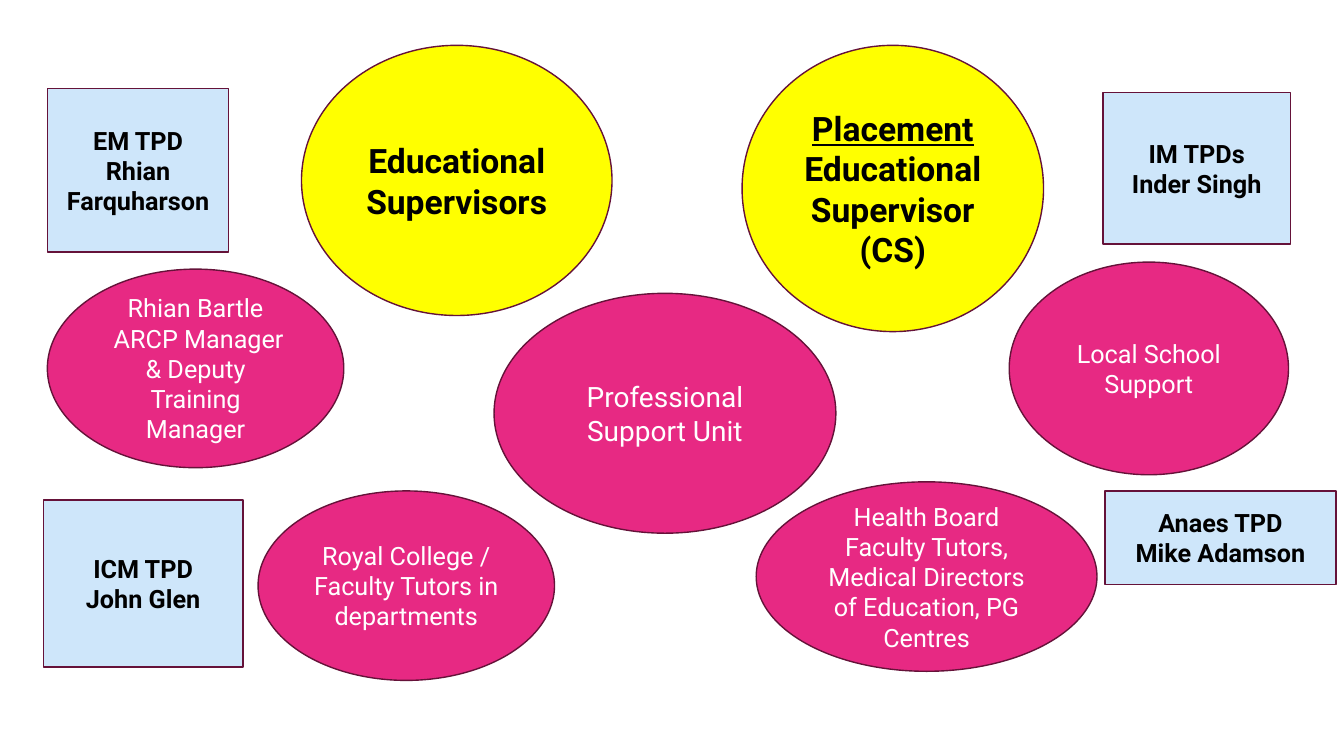
from pptx import Presentation
from pptx.dml.color import RGBColor
from pptx.enum.shapes import MSO_SHAPE
from pptx.enum.text import MSO_ANCHOR, PP_ALIGN
from pptx.util import Inches, Pt

FONT = "Roboto"
PINK, YELLOW, BLUE = "E72983", "FFFF00", "CEE6FA"
OUTLINE, WHITE, BLACK = "651239", "FFFFFF", "000000"

# Each entry: box (left, top, width, height), text, size
SUPPORT = [
    ((0.47, 2.67, 2.94, 1.97),
     "Rhian Bartle\n ARCP Manager & Deputy Training Manager", 18),
    ((4.9, 2.91, 3.39, 2.38), "Professional Support Unit", 20),
    ((10.01, 2.6, 2.77, 2.11), "Local School Support", 18),
    ((2.56, 4.87, 2.94, 1.88),
     "Royal College / Faculty Tutors in departments", 18),
    ((7.5, 4.78, 3.38, 1.88),
     "Health Board Faculty Tutors, Medical Directors of Education, PG Centres", 18),
]
# Each entry: box, underlined lead word, remaining text
SUPERVISORS = [
    ((2.99, 0.45, 3.08, 2.68), "", "Educational Supervisors"),
    ((7.36, 0.45, 2.99, 2.84), "Placement", " Educational Supervisor (CS)"),
]
# Each entry: box, text
DIRECTORS = [
    ((0.47, 0.88, 1.8, 1.62), "EM TPD\nRhian Farquharson"),
    ((0.43, 4.96, 1.98, 1.66), "ICM TPD\nJohn Glen"),
    ((10.94, 0.92, 1.86, 1.5), "IM TPDs\nInder Singh"),
    ((10.96, 4.87, 2.29, 0.93), "Anaes TPD\nMike Adamson"),
]


def rgb(value):
    return RGBColor.from_string(value)


def format_run(r, size, color, bold):
    r.font.name = FONT
    r.font.size = Pt(size)
    r.font.bold = bold
    r.font.color.rgb = rgb(color)


def add_node(s, kind, box, fill, text, size, color, bold=False):
    """Add an outlined shape with centred text."""
    sp = s.shapes.add_shape(kind, *[Inches(v) for v in box])
    sp.shadow.inherit = False
    sp.fill.solid()
    sp.fill.fore_color.rgb = rgb(fill)
    sp.line.color.rgb = rgb(OUTLINE)
    sp.line.width = Pt(1)
    tf = sp.text_frame
    tf.word_wrap = True
    tf.vertical_anchor = MSO_ANCHOR.MIDDLE
    tf.text = text
    for p in tf.paragraphs:
        p.alignment = PP_ALIGN.CENTER
        for r in p.runs:
            format_run(r, size, color, bold)
    return sp


def add_support(s, box, text, size):
    add_node(s, MSO_SHAPE.OVAL, box, PINK, text, size, WHITE)


def add_supervisor(s, box, lead, text):
    sp = add_node(s, MSO_SHAPE.OVAL, box, YELLOW, lead or text, 24, BLACK, True)
    if lead:
        p = sp.text_frame.paragraphs[0]
        p.runs[0].font.underline = True
        r = p.add_run()
        r.text = text
        format_run(r, 24, BLACK, True)


def add_director(s, box, text):
    add_node(s, MSO_SHAPE.RECTANGLE, box, BLUE, text, 18, BLACK, True)


def main():
    prs = Presentation()
    prs.slide_width, prs.slide_height = Inches(13.33), Inches(7.5)
    s = prs.slides.add_slide(prs.slide_layouts[6])

    # Support network
    for item in SUPPORT:
        add_support(s, *item)
    # Supervisors
    for item in SUPERVISORS:
        add_supervisor(s, *item)
    # Training programme directors
    for item in DIRECTORS:
        add_director(s, *item)

    prs.save("out.pptx")


if __name__ == "__main__":
    main()
